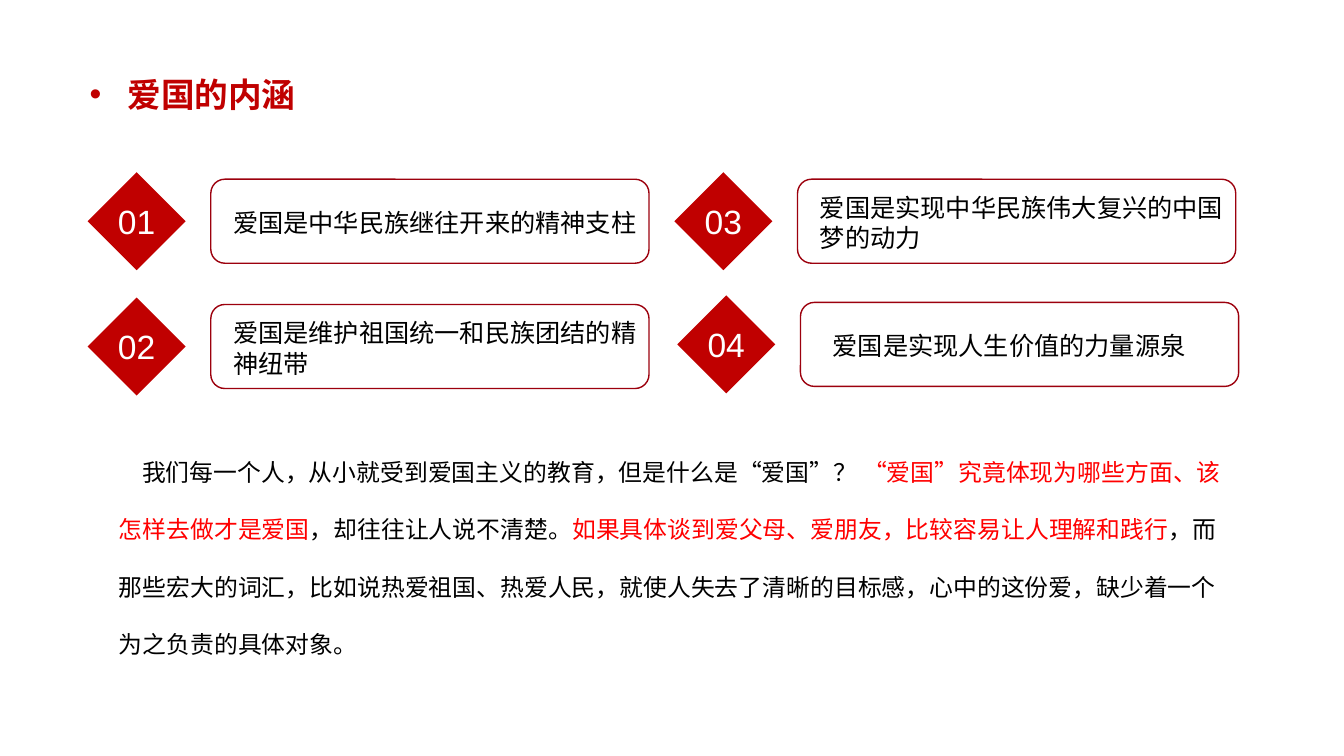
from lxml import etree
from pptx import Presentation
from pptx import util as u
from pptx.dml.color import RGBColor
from pptx.enum import lang, shapes, text
from pptx.oxml.ns import qn

INK = {"red": "C00000", "edge": "9C000D", "hot": "FF0000",
       "black": "000000", "white": "FFFFFF"}
FONT = "Arial"


def write(shape, runs, size=18, color="black", bold=False, align=None,
          anchor="TOP", pad=(0, 0), left=0, first=0, bullet=None,
          spacing=None, grow=False):
    """Fill a shape with one paragraph; runs is a string or (text, colour) pairs."""
    frame = shape.text_frame
    frame.word_wrap = True
    frame.vertical_anchor = text.MSO_ANCHOR[anchor]
    frame.margin_left = frame.margin_right = u.Pt(pad[0])
    frame.margin_top = frame.margin_bottom = u.Pt(pad[1])
    if grow:
        frame.auto_size = text.MSO_AUTO_SIZE.SHAPE_TO_FIT_TEXT
    para = frame.paragraphs[0]
    if align:
        para.alignment = text.PP_ALIGN[align]
    if spacing:
        para.line_spacing = spacing
    props = para._p.get_or_add_pPr()
    props.set("marL", str(u.Pt(left)))
    props.set("indent", str(u.Pt(first)))
    if bullet:
        etree.SubElement(props, qn("a:buFont")).set("typeface", FONT)
        etree.SubElement(props, qn("a:buChar")).set("char", bullet)
    for words, hue in [(runs, color)] if isinstance(runs, str) else runs:
        run = para.add_run()
        run.text = words
        font = run.font
        font.name, font.size, font.bold = FONT, u.Pt(size), bold
        font.language_id = lang.MSO_LANGUAGE_ID.SIMPLIFIED_CHINESE
        font.color.rgb = RGBColor.from_string(INK[hue])


class Deck:
    def __init__(self, wide, high):
        self.prs = Presentation()
        self.prs.slide_width, self.prs.slide_height = u.Pt(wide), u.Pt(high)
        self.slide = self.prs.slides.add_slide(self.prs.slide_layouts[6])

    def shape(self, kind, *box, fill=None, line=None):
        item = self.slide.shapes.add_shape(
            shapes.MSO_SHAPE[kind], *map(u.Pt, box))
        item.shadow.inherit = False
        if fill:
            item.fill.solid()
            item.fill.fore_color.rgb = RGBColor.from_string(INK[fill])
        else:
            item.fill.background()
        if line:
            item.line.color.rgb = RGBColor.from_string(INK[line])
            item.line.width = u.Pt(1)
        else:
            item.line.fill.background()
        return item

    def label(self, *box, words, **style):
        write(self.slide.shapes.add_textbox(*map(u.Pt, box)), words, **style)

    def card(self, num, left, top, shift, words):
        """Numbered diamond beside a framed statement."""
        gem = self.shape("DIAMOND", left, top, 70, 70, fill="red")
        write(gem, f"{num:02}", size=24, color="white", align="CENTER",
              anchor="MIDDLE")
        x, y, wide, high = left + 88, top + 5, 313, 60
        self.shape("ROUNDED_RECTANGLE", x, y, wide, high, line="edge")
        tall = 30 if len(words) <= 16 else 52
        self.label(x + shift, y + 1 + (high - tall) / 2, wide, tall,
                   words=words, pad=(8.5, 4.25), anchor="MIDDLE", grow=True)


CARDS = [
    (62.6, 123, 7.5, "爱国是中华民族继往开来的精神支柱"),
    (62.6, 212.5, 7.5, "爱国是维护祖国统一和民族团结的精神纽带"),
    (481.7, 123, 7.5, "爱国是实现中华民族伟大复兴的中国梦的动力"),
    (483.8, 211, 14.5, "爱国是实现人生价值的力量源泉"),
]

BODY = [
    ("我们每一个人，从小就受到爱国主义的教育，但是什么是“爱国”？ ", "black"),
    ("“爱国”究竟体现为哪些方面、该怎样去做才是爱国", "hot"),
    ("，却往往让人说不清楚。", "black"),
    ("如果具体谈到爱父母、爱朋友，比较容易让人理解和践行", "hot"),
    ("，而那些宏大的词汇，比如说热爱祖国、热爱人民，就使人失去了清晰的目标感，"
     "心中的这份爱，缺少着一个为之负责的具体对象。", "black"),
]


def main():
    deck = Deck(960, 540)
    deck.label(57, 49.5, 210, 36, words="爱国的内涵", size=24, color="red",
               bold=True, align="JUSTIFY", pad=(7.2, 3.6), left=27,
               first=-27, bullet="•", grow=True)
    for num, card in enumerate(CARDS, 1):
        deck.card(num, *card)
    deck.label(57.6, 301.7, 832.3, 176.4, words=BODY, size=17,
               pad=(9.4, 5), left=18, first=16.5, spacing=2.0)
    deck.prs.save("out.pptx")


if __name__ == "__main__":
    main()
